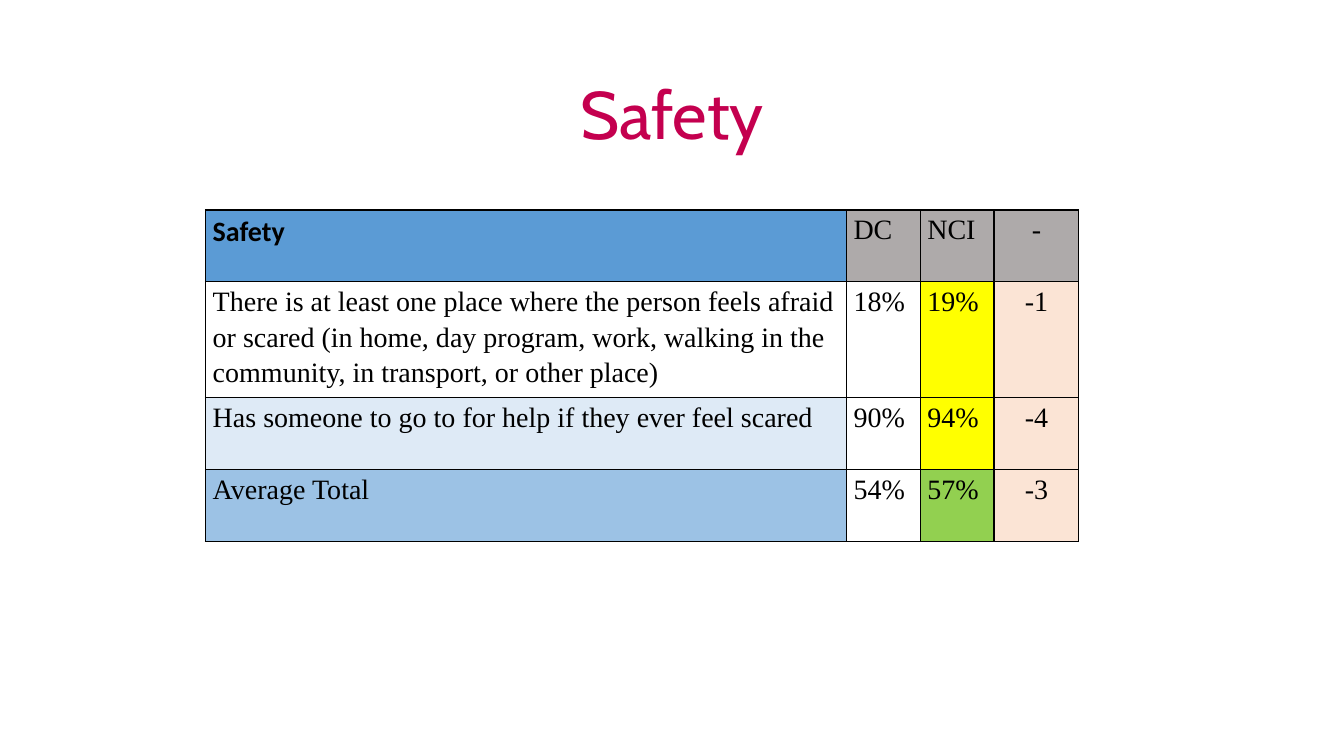
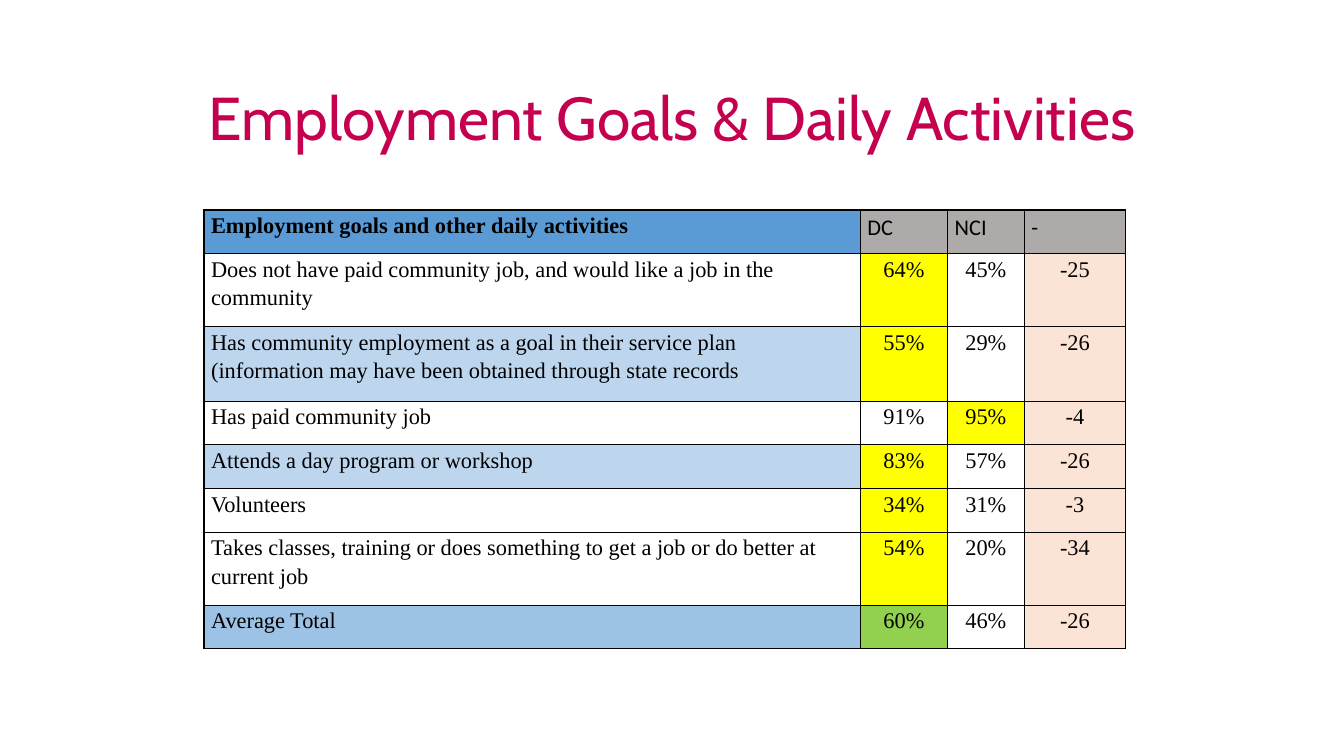
from lxml import etree
from pptx import Presentation
from pptx.dml.color import RGBColor
from pptx.enum.text import MSO_ANCHOR, PP_ALIGN
from pptx.oxml.ns import qn
from pptx.util import Cm, Pt

LEFT, CENTER = PP_ALIGN.LEFT, PP_ALIGN.CENTER
TOP = MSO_ANCHOR.TOP

COLORS = {
    "title": "C4004F",
    "text": "000000",
    "border": "000000",
    "heading": "5B9BD5",
    "column_head": "AEAAAA",
    "pale_tint": "DEEAF6",
    "tint": "BDD6EE",
    "total": "9CC2E5",
    "higher": "FFFF00",
    "higher_total": "92D050",
    "difference": "FBE4D5",
}
SERIF, SANS, TITLE_FONT = "Times New Roman", "Calibri", "Cabin"
BLANK_LAYOUT = 6


class SurveyDeck:
    """Holds the shared style and the slide being built."""

    def __init__(self):
        self.deck = Presentation()
        self.deck.slide_width = Cm(33.87)
        self.deck.slide_height = Cm(19.05)
        self.page = None

    def add_page(self, title, size):
        self.page = self.deck.slides.add_slide(self.deck.slide_layouts[BLANK_LAYOUT])
        box = self.page.shapes.add_textbox(Cm(3.39), Cm(2.12), Cm(27.09), Cm(3.17))
        frame = box.text_frame
        frame.word_wrap = True
        frame.vertical_anchor = TOP
        frame.margin_left = frame.margin_right = 0
        frame.margin_top = frame.margin_bottom = 0
        frame.text = title
        para = frame.paragraphs[0]
        para.alignment = CENTER
        para.line_spacing = Pt(49)
        self.style_span(para.runs[0], TITLE_FONT, size, "title")

    def style_span(self, span, font, size, color="text", bold=False):
        span.font.name = font
        span.font.size = Pt(size)
        span.font.bold = bold
        span.font.color.rgb = RGBColor.from_string(COLORS[color])

    def draw_borders(self, cell):
        properties = cell._tc.get_or_add_tcPr()
        for position, side in enumerate(("lnL", "lnR", "lnT", "lnB")):
            line = etree.Element(qn("a:" + side), w=str(Pt(1)))
            fill = etree.SubElement(line, qn("a:solidFill"))
            etree.SubElement(fill, qn("a:srgbClr"), val=COLORS["border"])
            properties.insert(position, line)

    def fill_cell(self, cell, text, font, size, fill=None, align=LEFT, bold=False):
        cell.margin_left = cell.margin_right = Cm(0.18)
        cell.margin_top = cell.margin_bottom = 0
        cell.vertical_anchor = TOP
        cell.text_frame.text = text
        para = cell.text_frame.paragraphs[0]
        para.alignment = align
        para.line_spacing = 1.15
        self.style_span(para.runs[0], font, size, bold=bold)
        if fill:
            cell.fill.solid()
            cell.fill.fore_color.rgb = RGBColor.from_string(COLORS[fill])
        else:
            cell.fill.background()
        self.draw_borders(cell)

    def add_score_table(self, left, widths, heights, heading, rows, size,
                        heading_font, column_font, tint, tinted_rows,
                        head_aligns, value_aligns):
        frame = self.page.shapes.add_table(
            len(heights), len(widths), Cm(left), Cm(5.29),
            Cm(sum(widths)), Cm(sum(heights)))
        table = frame.table
        table.first_row = table.horz_banding = False
        for column, width in zip(table.columns, widths):
            column.width = Cm(width)
        for row, height in zip(table.rows, heights):
            row.height = Cm(height)

        # Header row
        self.fill_cell(table.cell(0, 0), heading, heading_font, size, "heading", bold=True)
        for column, (name, align) in enumerate(zip(("DC", "NCI", "-"), head_aligns), 1):
            self.fill_cell(table.cell(0, column), name, column_font, size, "column_head", align)

        # Score rows: the higher of the two scores is highlighted
        for index, (label, dc, nci, difference) in enumerate(rows, 1):
            is_total = index == len(rows)
            label_fill = "total" if is_total else tint if index in tinted_rows else None
            highlight = "higher_total" if is_total else "higher"
            values = (
                (f"{dc}%", highlight if dc > nci else None),
                (f"{nci}%", highlight if nci > dc else None),
                (str(difference), "difference"),
            )
            self.fill_cell(table.cell(index, 0), label, SERIF, size, label_fill)
            for column, ((text, fill), align) in enumerate(zip(values, value_aligns), 1):
                self.fill_cell(table.cell(index, column), text, SERIF, size, fill, align)


def main():
    survey = SurveyDeck()

    # Safety
    survey.add_page("Safety", 48)
    survey.add_score_table(
        left=5.18,
        widths=(16.15, 1.86, 1.86, 2.14),
        heights=(1.81, 2.72, 1.81, 1.81),
        heading="Safety",
        rows=(
            ("There is at least one place where the person feels afraid or scared "
             "(in home, day program, work, walking in the community, in transport, "
             "or other place)", 18, 19, -1),
            ("Has someone to go to for help if they ever feel scared", 90, 94, -4),
            ("Average Total", 54, 57, -3),
        ),
        size=20, heading_font=SANS, column_font=SERIF,
        tint="pale_tint", tinted_rows=(2,),
        head_aligns=(LEFT, LEFT, CENTER), value_aligns=(LEFT, LEFT, CENTER))

    # Employment
    survey.add_page("Employment Goals & Daily Activities", 43.2)
    single, double = 1.1, 1.84
    survey.add_score_table(
        left=5.14,
        widths=(16.54, 2.2, 1.93, 2.56),
        heights=(single, double, 1.88, single, single, single, double, single),
        heading="Employment goals and other daily activities",
        rows=(
            ("Does not have paid community job, and would like a job in the community",
             64, 45, -25),
            ("Has community employment as a goal in their service plan (information "
             "may have been obtained through state records", 55, 29, -26),
            ("Has paid community job", 91, 95, -4),
            ("Attends a day program or workshop", 83, 57, -26),
            ("Volunteers", 34, 31, -3),
            ("Takes classes, training or does something to get a job or do better "
             "at current job", 54, 20, -34),
            ("Average Total", 60, 46, -26),
        ),
        size=16, heading_font=SERIF, column_font=SANS,
        tint="tint", tinted_rows=(2, 4),
        head_aligns=(LEFT,) * 3, value_aligns=(CENTER,) * 3)

    survey.deck.save("out.pptx")


if __name__ == "__main__":
    main()
